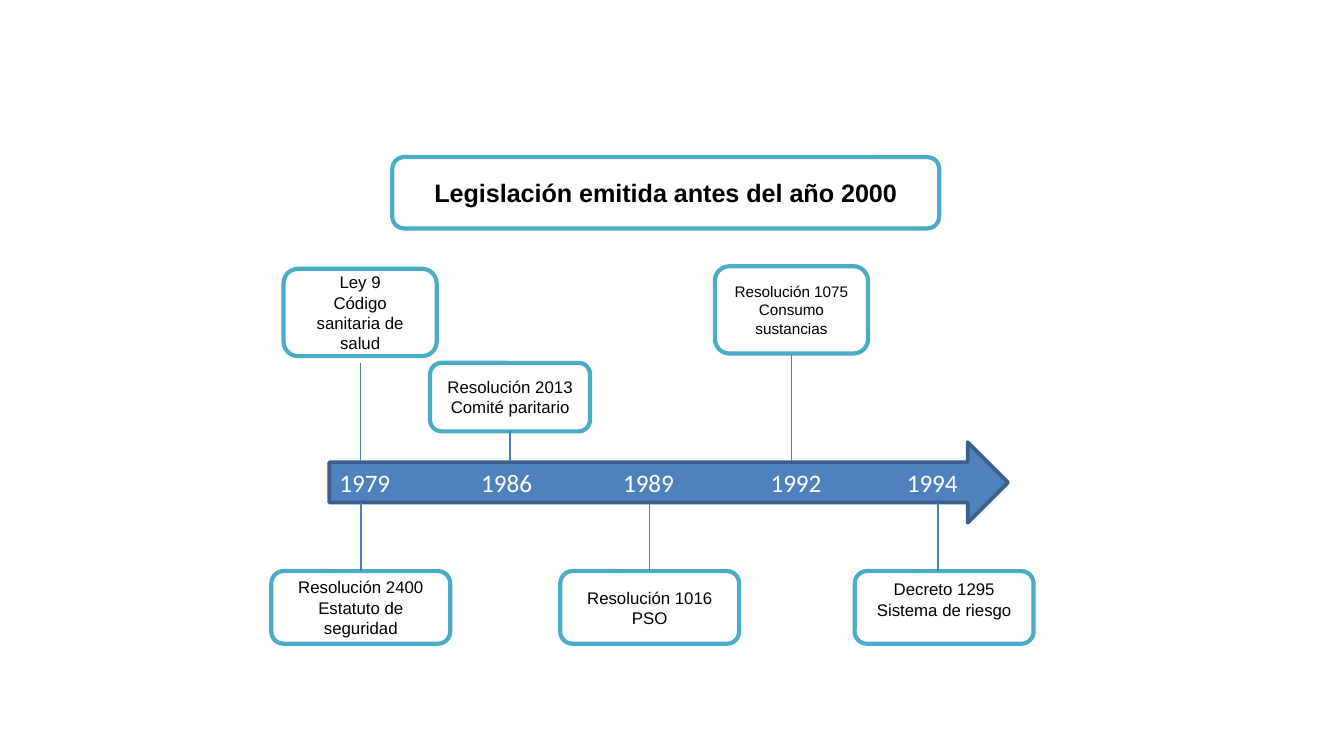
from lxml.etree import SubElement
from pptx import Presentation
from pptx.dml.color import RGBColor
from pptx.enum.shapes import MSO_CONNECTOR, MSO_SHAPE
from pptx.enum.text import MSO_ANCHOR, PP_ALIGN
from pptx.oxml.ns import qn
from pptx.util import Pt

COLORS = {
    "white": "FFFFFF",
    "black": "000000",
    "teal": "4BACC6",
    "blue": "4F81BD",
    "navy": "3A5F8C",
    "stem": "4B7EBC",
}


def add_block(preset, frame, lines, size, font, colors, line_width, align):
    """Add a filled, outlined shape; colors are fill, line and text."""
    shape = page.shapes.add_shape(preset, *[Pt(length) for length in frame])
    shape.shadow.inherit = False
    fill, line, text = [RGBColor.from_string(COLORS[name]) for name in colors]
    shape.fill.solid()
    shape.fill.fore_color.rgb = fill
    shape.line.color.rgb = line
    shape.line.width = Pt(line_width)
    text_frame = shape.text_frame
    text_frame.word_wrap = True
    text_frame.vertical_anchor = MSO_ANCHOR.MIDDLE
    text_frame.margin_left = text_frame.margin_right = Pt(6.5)
    text_frame.margin_top = text_frame.margin_bottom = Pt(2.7)
    text_frame.text = "\n".join(lines)
    for para in text_frame.paragraphs:
        para.alignment = align
        for span in para.runs:
            span.font.size = Pt(size)
            span.font.name = font
            span.font.color.rgb = text
    return shape


def add_box(frame, lines, size):
    return add_block(MSO_SHAPE.ROUNDED_RECTANGLE, frame, lines, size, "Arial",
                     ("white", "teal", "black"), 2.25, PP_ALIGN.CENTER)


deck = Presentation()
deck.slide_width, deck.slide_height = Pt(720), Pt(405)
page = deck.slides.add_slide(deck.slide_layouts[6])

title = add_box((210.2, 84.2, 293, 38.2),
                ["Legislación emitida antes del año 2000"], 13.5)
title.text_frame.paragraphs[0].runs[0].font.bold = True

# Timeline arrow: the years sit on tab stops
years = ["1979", "1986", "1989", "1992", "1994"]
arrow = add_block(MSO_SHAPE.RIGHT_ARROW, (176.4, 236.9, 363.6, 43.2),
                  ["\t".join(years)], 13.5, "Calibri",
                  ("blue", "navy", "white"), 2, PP_ALIGN.LEFT)
arrow.text_frame.margin_left = Pt(5.4)
properties = arrow.text_frame.paragraphs[0]._p.get_or_add_pPr()
tab_list = SubElement(properties, qn("a:tabLst"))
for stop in (76, 152, 231, 304):
    SubElement(tab_list, qn("a:tab"), pos=str(Pt(stop)), algn="l")

SHAFT_TOP, SHAFT_BOTTOM = 247, 269.3

# Laws: frame, lines, text size, stem x, stem start y, joined side
laws = [
    ((151.9, 144, 82.1, 46.8), ["Ley 9", "Código sanitaria de salud"],
     9, 193, 194.4, None),
    ((230.4, 194.4, 85.7, 36.7), ["Resolución 2013", "Comité paritario"],
     9, 273.3, 231.1, 2),
    ((383, 142.6, 82.1, 46.8), ["Resolución 1075", "Consumo sustancias"],
     8.2, 424, 189.4, 2),
    ((145.4, 306, 95.8, 38.9), ["Resolución 2400", "Estatuto de seguridad"],
     9, 193.3, 306, 0),
    ((300.2, 306, 95.8, 38.9), ["Resolución 1016", "PSO"],
     9, 348.1, 306, 0),
    ((457.9, 306, 95.8, 38.9), ["Decreto 1295", "Sistema de riesgo"],
     9, 502.6, 306, None),
]
for frame, lines, size, x, y, side in laws:
    box = add_box(frame, lines, size)
    if lines[0] == "Decreto 1295":
        box.text_frame.margin_bottom = Pt(11.3)
    shaft_y = SHAFT_TOP if y < SHAFT_TOP else SHAFT_BOTTOM
    stem = page.shapes.add_connector(MSO_CONNECTOR.STRAIGHT,
                                     Pt(x), Pt(y), Pt(x), Pt(shaft_y))
    if side is not None:
        stem.begin_connect(box, side)
        stem.end_x = stem.begin_x
    stem.line.color.rgb = RGBColor.from_string(COLORS["stem"])
    stem.line.width = Pt(0.75)
    SubElement(stem._element.spPr, qn("a:effectLst"))

deck.save("out.pptx")
